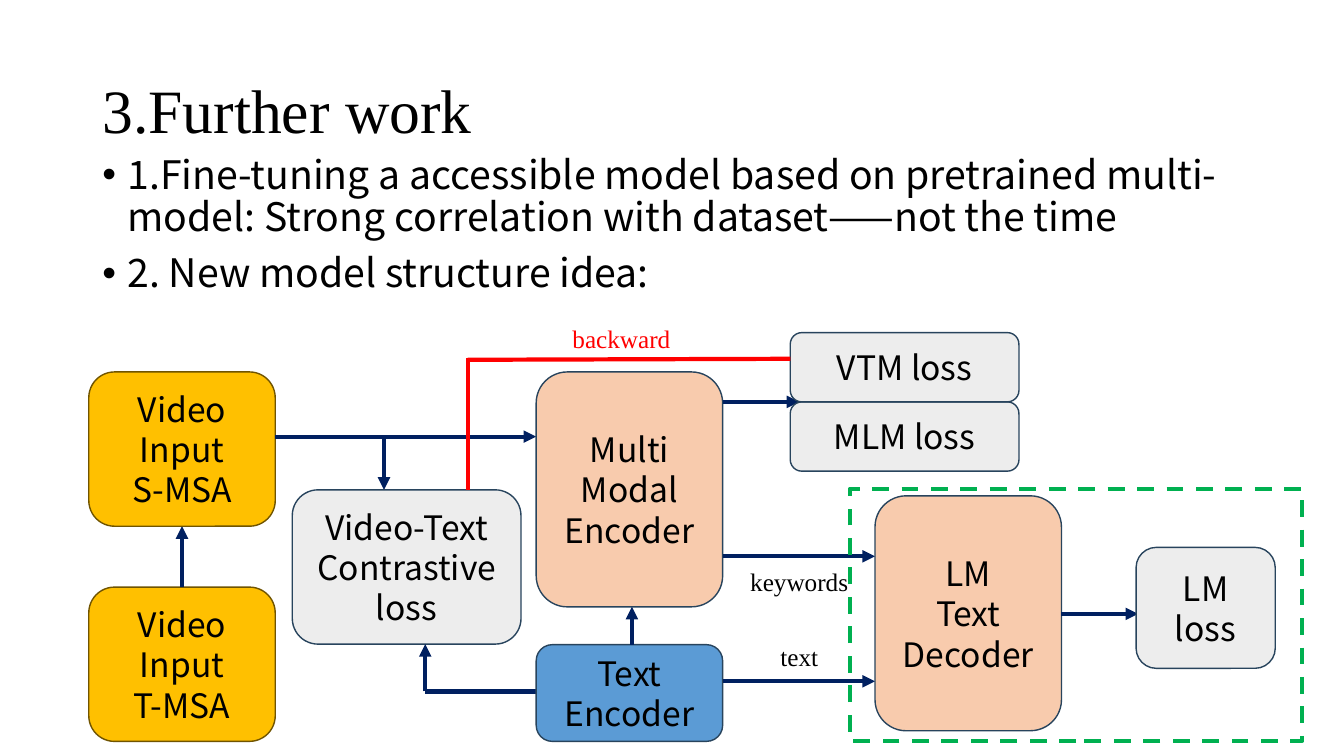
import pptx
import pptx.util
import pptx.dml.color
import pptx.enum.dml
import pptx.enum.shapes
import pptx.enum.text
import pptx.oxml
import pptx.oxml.ns

Pt = pptx.util.Pt
RGB = pptx.dml.color.RGBColor
SHAPE = pptx.enum.shapes.MSO_SHAPE
ANCHOR = pptx.enum.text.MSO_ANCHOR
ALIGN = pptx.enum.text.PP_ALIGN

BLACK = RGB(0x00, 0x00, 0x00)
RED = RGB(0xFF, 0x00, 0x00)
NAVY = RGB(0x00, 0x20, 0x60)
GOLD = RGB(0xFF, 0xC0, 0x00)
BROWN = RGB(0x70, 0x54, 0x00)
BLUE = RGB(0x5B, 0x9B, 0xD5)
SLATE = RGB(0x28, 0x44, 0x5D)
GREY = RGB(0xED, 0xED, 0xED)
PEACH = RGB(0xF8, 0xCB, 0xAD)
GREEN = RGB(0x00, 0xB0, 0x50)

SANS = "Noto Sans CJK SC"
SERIF = "Times New Roman"
NODE_W, VIDEO_H, MODEL_H = 133.2, 110.2, 167.8


def sub(parent, tag, **attrs):
    el = pptx.oxml.parse_xml("<a:%s %s/>" % (tag, pptx.oxml.ns.nsdecls("a")))
    for key, value in attrs.items():
        el.set(key, value)
    parent.append(el)


def write(sp, lines, size, font, color=BLACK, anchor=ANCHOR.TOP, **para):
    tf = sp.text_frame
    tf.word_wrap = True
    tf.vertical_anchor = anchor
    for i, line in enumerate(lines):
        p = tf.paragraphs[0] if i == 0 else tf.add_paragraph()
        for key, value in para.items():
            setattr(p, key, value)
        r = p.add_run()
        r.text = line
        for key, value in {"size": Pt(size), "name": font}.items():
            setattr(r.font, key, value)
        r.font.color.rgb = color
        sub(r.font._element, "ea", typeface=font)
    return tf


def textbox(s, x, y, w, h, lines, size, font, **fmt):
    sp = s.shapes.add_textbox(Pt(x), Pt(y), Pt(w), Pt(h))
    return write(sp, lines, size, font, **fmt)


def node(s, x, y, w, h, lines, fill, outline=SLATE):
    sp = s.shapes.add_shape(SHAPE.ROUNDED_RECTANGLE, Pt(x), Pt(y), Pt(w), Pt(h))
    sp.shadow.inherit = False
    sp.fill.solid()
    sp.fill.fore_color.rgb = fill
    sp.line.color.rgb = outline
    sp.line.width = Pt(1)
    write(sp, lines, 24, SANS, anchor=ANCHOR.MIDDLE, alignment=ALIGN.CENTER)


def link(s, x1, y1, x2, y2, color=NAVY, arrow=True):
    cx = s.shapes.add_connector(pptx.enum.shapes.MSO_CONNECTOR.STRAIGHT,
                                Pt(x1), Pt(y1), Pt(x2), Pt(y2))
    cx.line.color.rgb = color
    cx.line.width = Pt(3)
    if arrow:
        sub(cx.line._get_or_add_ln(), "tailEnd", type="triangle")
    sub(cx._element.spPr, "effectLst")


def title(s, x, y, w, h):
    textbox(s, x, y, w, h, ["3.Further work"], 44, SERIF,
            anchor=ANCHOR.MIDDLE, line_spacing=0.9)


def body(s, x, y, w, h):
    lines = ["1.Fine-tuning a accessible model based on pretrained multi-model: "
             "Strong correlation with dataset——not the time",
             "2. New model structure idea:"]
    tf = textbox(s, x, y, w, h, lines, 28, SANS,
                 line_spacing=0.9, space_before=Pt(10))
    for p in tf.paragraphs:
        pPr = p._p.get_or_add_pPr()
        for key, value in {"marL": Pt(18), "indent": -Pt(18)}.items():
            pPr.set(key, str(value))
        sub(pPr, "buFont", typeface="Arial")
        sub(pPr, "buChar", char="•")


def video_inputs(s, x, y, w, h):
    bottom = y + h - VIDEO_H
    node(s, x, bottom, w, VIDEO_H, ["Video", "Input", "T-MSA"], GOLD, BROWN)
    link(s, x + w / 2, bottom, x + w / 2, y + VIDEO_H)
    node(s, x, y, w, VIDEO_H, ["Video", "Input", "S-MSA"], GOLD, BROWN)


def contrastive(s, x, y, w, h):
    feed, turn = y - 38, y + 144
    encoder = x + 174.2
    link(s, x - 12.2, feed, encoder, feed)
    link(s, x + 65.5, feed, x + 65.5, y)
    node(s, x, y, w, h, ["Video-Text", "Contrastive", "loss"], GREY)
    link(s, encoder, turn, x + 95, turn, arrow=False)
    link(s, x + 95, turn, x + 95, y + h)


def encoders(s, x, y, w, h):
    text_h = 69.1
    text_y = y + h - text_h
    node(s, x, text_y, w, text_h, ["Text", "Encoder"], BLUE)
    node(s, x, y, w, MODEL_H, ["Multi", "Modal", "Encoder"], PEACH)
    link(s, x + 68.4, text_y, x + 68.4, y + MODEL_H)


def matching_losses(s, x, y, w, h):
    half = h / 2
    link(s, x - 48.3, y + half, x + 6.5, y + half)
    node(s, x, y + half, w, half, ["MLM loss"], GREY)
    node(s, x, y, w, half, ["VTM loss"], GREY)
    back = x - 230.4
    link(s, back, y + 112.3, back, y + 18, RED, False)
    link(s, x, y + 18.7, back, y + 19.4, RED, False)
    textbox(s, x - 162.7, y - 10.1, 95, 29, ["backward"], 18, SERIF, color=RED)


def decoder(s, x, y, w, h):
    model_x, mid = x + 18, y + 89.3
    for dy, label_dy, label in [(48.2, 51.8, "keywords"), (137.5, 105.1, "text")]:
        link(s, x - 90.8, y + dy, model_x, y + dy)
        textbox(s, x - 83.6, y + label_dy, 95, 29, [label], 18, SERIF,
                alignment=ALIGN.CENTER)
    node(s, model_x, y + 5, NODE_W, MODEL_H, ["LM", "Text", "Decoder"], PEACH)
    link(s, model_x + NODE_W, mid, x + 206, mid)
    node(s, x + 204.5, y + 41.8, 99.4, 86.4, ["LM loss"], GREY)
    sp = s.shapes.add_shape(SHAPE.RECTANGLE, Pt(x), Pt(y), Pt(w), Pt(h))
    sp.shadow.inherit = False
    sp.fill.background()
    sp.line.color.rgb = GREEN
    sp.line.width = Pt(3)
    sp.line.dash_style = pptx.enum.dml.MSO_LINE.DASH


def main():
    prs = pptx.Presentation()
    prs.slide_width, prs.slide_height = Pt(960), Pt(540)
    s = prs.slides.add_slide(prs.slide_layouts[6])
    title(s, 66, 28.8, 828, 104.4)
    body(s, 66, 107.3, 828, 432.7)
    video_inputs(s, 63.4, 265.7, NODE_W, 263.9)
    contrastive(s, 208.8, 349.9, 163.4, VIDEO_H)
    encoders(s, 383, 265.7, NODE_W, 263.9)
    matching_losses(s, 564.5, 237.6, 163.4, 99)
    decoder(s, 607, 349.2, 323.3, 180)
    prs.save("out.pptx")


if __name__ == "__main__":
    main()
